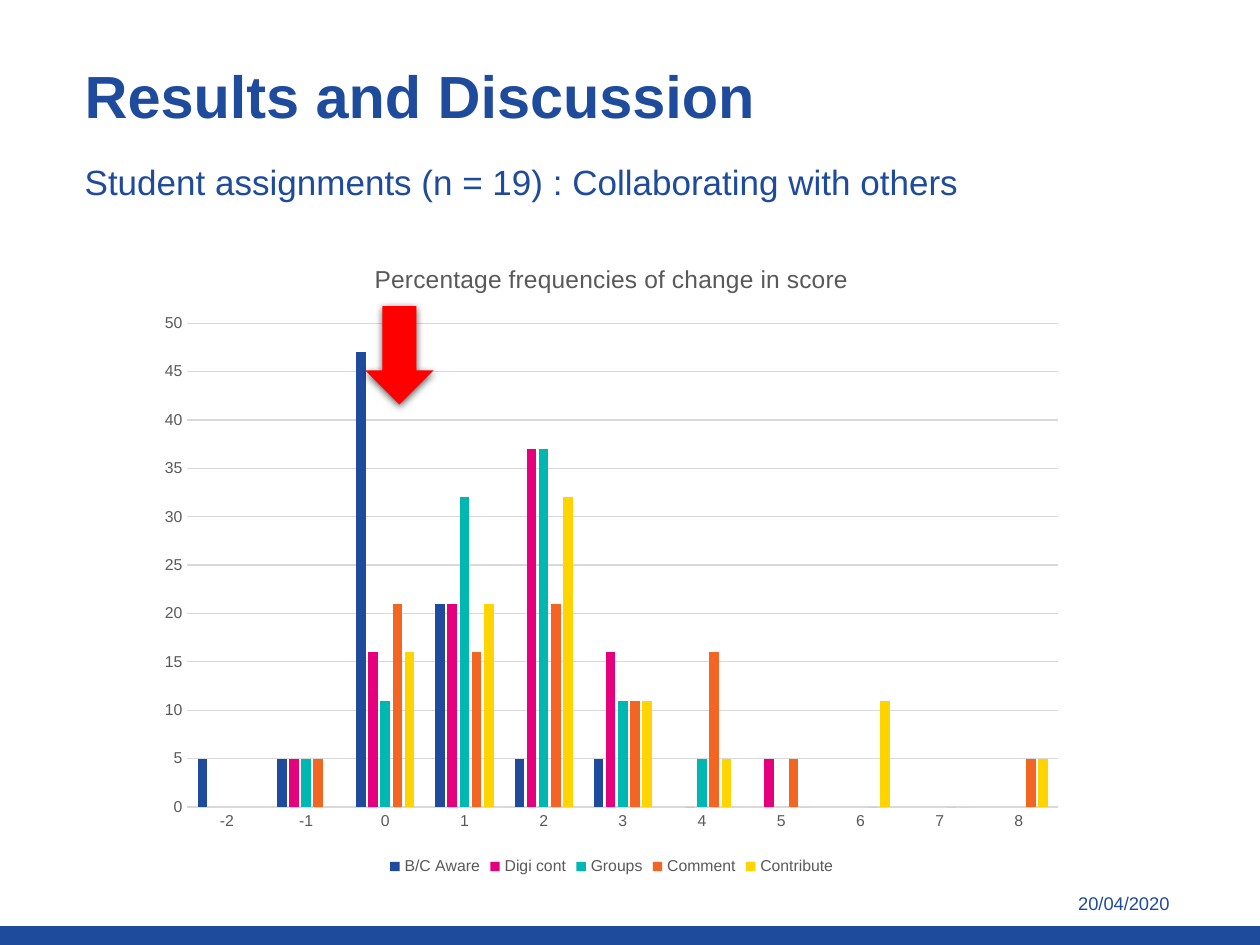
from lxml import etree
from pptx import Presentation
from pptx.chart.data import CategoryChartData as Data
from pptx.dml.color import RGBColor as RGB
from pptx.enum.chart import XL_CHART_TYPE as Kind, XL_LEGEND_POSITION as Spot, XL_TICK_MARK as Tick
from pptx.enum.shapes import MSO_SHAPE as Shape
from pptx.enum.text import MSO_ANCHOR as Anchor, PP_ALIGN as Align
from pptx.oxml import parse_xml
from pptx.oxml.ns import nsdecls
from pptx.util import Pt

BLUE = RGB(0x1E, 0x4B, 0x9B)
PINK = RGB(0xE5, 0x00, 0x7D)
TEAL = RGB(0x00, 0xB7, 0xB2)
ORANGE = RGB(0xF2, 0x65, 0x22)
YELLOW = RGB(0xFF, 0xD4, 0x00)
RED = RGB(0xFF, 0x00, 0x00)
GREY = RGB(0x59, 0x59, 0x59)
PALE = RGB(0xD9, 0xD9, 0xD9)


def style(font, size, color, bold=False):
    font.name = "Arial"
    font.size = Pt(size)
    font.color.rgb = color
    font.bold = bold


def write(box, text, size, bold=False, inset=None, anchor=Anchor.TOP):
    frame = box.text_frame
    frame.word_wrap = True
    frame.vertical_anchor = anchor
    if inset:
        frame.margin_left, frame.margin_top, frame.margin_right, frame.margin_bottom = map(Pt, inset)
    frame.text = text
    para = frame.paragraphs[0]
    para.alignment = Align.LEFT
    style(para.font, size, BLUE, bold)
    return para


deck = Presentation()
deck.slide_width, deck.slide_height = Pt(720), Pt(540)
slide = deck.slides.add_slide(deck.slide_layouts[5])
shapes = slide.shapes

band = shapes.add_shape(Shape.RECTANGLE, 0, Pt(529.9), Pt(720), Pt(9.4))
band.shadow.inherit = False
band.fill.solid()
band.fill.fore_color.rgb = BLUE
band.line.color.rgb = BLUE
band.line.width = Pt(1)

date = shapes.add_textbox(Pt(597.6), Pt(506.2), Pt(77.8), Pt(20))
write(date, "20/04/2020", 10.5).alignment = Align.RIGHT

title = shapes.title
title.left, title.top, title.width, title.height = Pt(45.4), Pt(36.7), Pt(469.4), Pt(69)
head = write(title, "Results and Discussion", 34, True, (3, 3, 1.5, 3))
head.line_spacing = 0.85

sub = shapes.add_textbox(Pt(45.4), Pt(78.5), Pt(542.2), Pt(42.5))
write(sub, "Student assignments (n = 19) : Collaborating with others", 20,
      inset=(3, 11.5, 1.5, 3), anchor=Anchor.MIDDLE)

rows = [
    ("B/C Aware", BLUE, [5, 5, 47, 21, 5, 5, None, None, None, None, None]),
    ("Digi cont", PINK, [None, 5, 16, 21, 37, 16, 0, 5, None, None, None]),
    ("Groups", TEAL, [None, 5, 11, 32, 37, 11, 5, None, None, None, None]),
    ("Comment", ORANGE, [None, 5, 21, 16, 21, 11, 16, 5, 0, 0, 5]),
    ("Contribute", YELLOW, [None, None, 16, 21, 32, 11, 5, 0, 11, 0, 5]),
]
data = Data()
data.categories = [str(score) for score in range(-2, 9)]
for name, color, vals in rows:
    data.add_series(name, vals)
chart = shapes.add_chart(Kind.COLUMN_CLUSTERED, Pt(83.5), Pt(136.8), Pt(532), Pt(366.5), data).chart
style(chart.font, 10, GREY)

chart.has_title = True
frame = chart.chart_title.text_frame
frame.text = "Percentage frequencies of change in score"
style(frame.paragraphs[0].font, 14, GREY)
chart.chart_title.include_in_layout = False

chart.has_legend = True
chart.legend.position = Spot.BOTTOM
chart.legend.include_in_layout = False
style(chart.legend.font, 9, GREY)

plot = chart.plots[0]
plot.gap_width = 219
plot.overlap = -27
plot.vary_by_categories = False
for series, (name, color, vals) in zip(plot.series, rows):
    series.format.fill.solid()
    series.format.fill.fore_color.rgb = color

base, scale = chart.category_axis, chart.value_axis
for axis in (base, scale):
    axis.major_tick_mark = axis.minor_tick_mark = Tick.NONE
    style(axis.tick_labels.font, 9, GREY)
scale.minimum_scale, scale.maximum_scale, scale.major_unit = 0, 50, 5
scale.format.line.fill.background()
for line in (base.format.line, scale.major_gridlines.format.line):
    line.color.rgb = PALE
    line.width = Pt(0.75)

arrow = shapes.add_shape(Shape.DOWN_ARROW, Pt(208.8), Pt(174.9), Pt(38.9), Pt(56.2))
arrow.fill.solid()
arrow.fill.fore_color.rgb = RED
arrow.line.fill.background()
arrow.shadow.inherit = False
glow = arrow.element.spPr.find("{*}effectLst")
glow.append(parse_xml(
    f'<a:outerShdw {nsdecls("a")} blurRad="{Pt(4.5)}" dist="{Pt(1.5)}" dir="5400000" rotWithShape="0">'
    '<a:srgbClr val="000000"><a:alpha val="63000"/></a:srgbClr></a:outerShdw>'))

deck.save("out.pptx")
